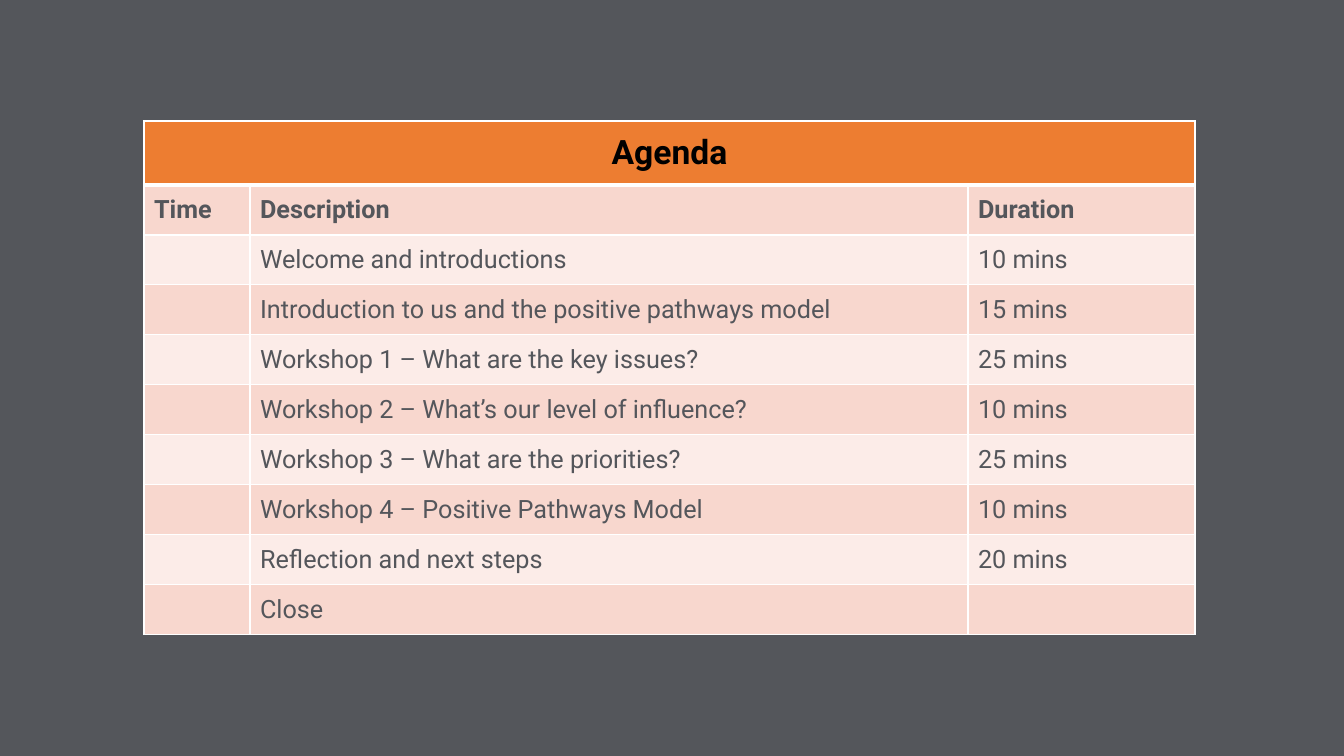
from lxml import etree
from pptx import Presentation
from pptx import util as u
from pptx.dml import color
from pptx.enum import text
from pptx.oxml import ns

EMU_PER_PX = 914400 / 100.8
SLATE, ORANGE, WHITE, BLACK = "54565B", "ED7D31", "FFFFFF", "000000"
BANDS = ["F8D7CE", "FCECE8"]
COLUMN_WIDTHS = [106, 718, 227]
TITLE_HEIGHT, ROW_HEIGHT = 64, 50

AGENDA = [
    ("Time", "Description", "Duration"),
    ("", "Welcome and introductions", "10 mins"),
    ("", "Introduction to us and the positive pathways model", "15 mins"),
    ("", "Workshop 1 – What are the key issues?", "25 mins"),
    ("", "Workshop 2 – What’s our level of influence?", "10 mins"),
    ("", "Workshop 3 – What are the priorities?", "25 mins"),
    ("", "Workshop 4 – Positive Pathways Model", "10 mins"),
    ("", "Reflection and next steps", "20 mins"),
    ("", "Close", ""),
]


def px(length):
    return u.Emu(round(length * EMU_PER_PX))


def rgb(value):
    return color.RGBColor.from_string(value)


def set_fill(target, value):
    target.fill.solid()
    target.fill.fore_color.rgb = rgb(value)


def add_borders(cell, **widths):
    """Draw white borders; widths in points override the 1 pt default by side."""
    properties = cell._tc.get_or_add_tcPr()
    for position, side in enumerate("LRTB"):
        line = etree.Element(ns.qn(f"a:ln{side}"), w=str(u.Pt(widths.get(side, 1))))
        fill = etree.SubElement(line, ns.qn("a:solidFill"))
        etree.SubElement(fill, ns.qn("a:srgbClr"), val=WHITE)
        properties.insert(position, line)


def write_cell(cell, words, value, align=text.PP_ALIGN.LEFT, **format_values):
    cell.vertical_anchor = text.MSO_ANCHOR.MIDDLE
    para = cell.text_frame.paragraphs[0]
    para.alignment = align
    if not words:
        para.font.size = u.Pt(18)
        return
    span = para.add_run()
    span.text = words
    font_values = {"name": "Roboto", "size": u.Pt(18), "bold": False, **format_values}
    for name, setting in font_values.items():
        setattr(span.font, name, setting)
    span.font.color.rgb = rgb(value)


def add_agenda(page, left, top):
    height = TITLE_HEIGHT + ROW_HEIGHT * len(AGENDA)
    frame = page.shapes.add_table(len(AGENDA) + 1, len(COLUMN_WIDTHS), px(left), px(top),
                                  px(sum(COLUMN_WIDTHS)), px(height))
    table = frame.table
    for column, width in zip(table.columns, COLUMN_WIDTHS):
        column.width = px(width)
    for index, row in enumerate(table.rows):
        row.height = px(ROW_HEIGHT if index else TITLE_HEIGHT)

    # Title row across all columns
    title = table.cell(0, 0)
    title.merge(table.cell(0, len(COLUMN_WIDTHS) - 1))
    write_cell(title, "Agenda", BLACK, text.PP_ALIGN.CENTER, size=u.Pt(24), bold=True)
    for cell in table.rows[0].cells:
        set_fill(cell, ORANGE)
        add_borders(cell, B=3)

    # Column headings and banded sessions
    for index, entries in enumerate(AGENDA):
        for cell, words in zip(table.rows[index + 1].cells, entries):
            write_cell(cell, words, SLATE, bold=index == 0)
            set_fill(cell, BANDS[index % 2])
            add_borders(cell, T=1 if index else 3)


def main():
    deck = Presentation()
    deck.slide_width, deck.slide_height = px(1344), px(756)
    page = deck.slides.add_slide(deck.slide_layouts[6])
    set_fill(page.background, SLATE)
    add_agenda(page, 144, 121)
    deck.save("out.pptx")


if __name__ == "__main__":
    main()
